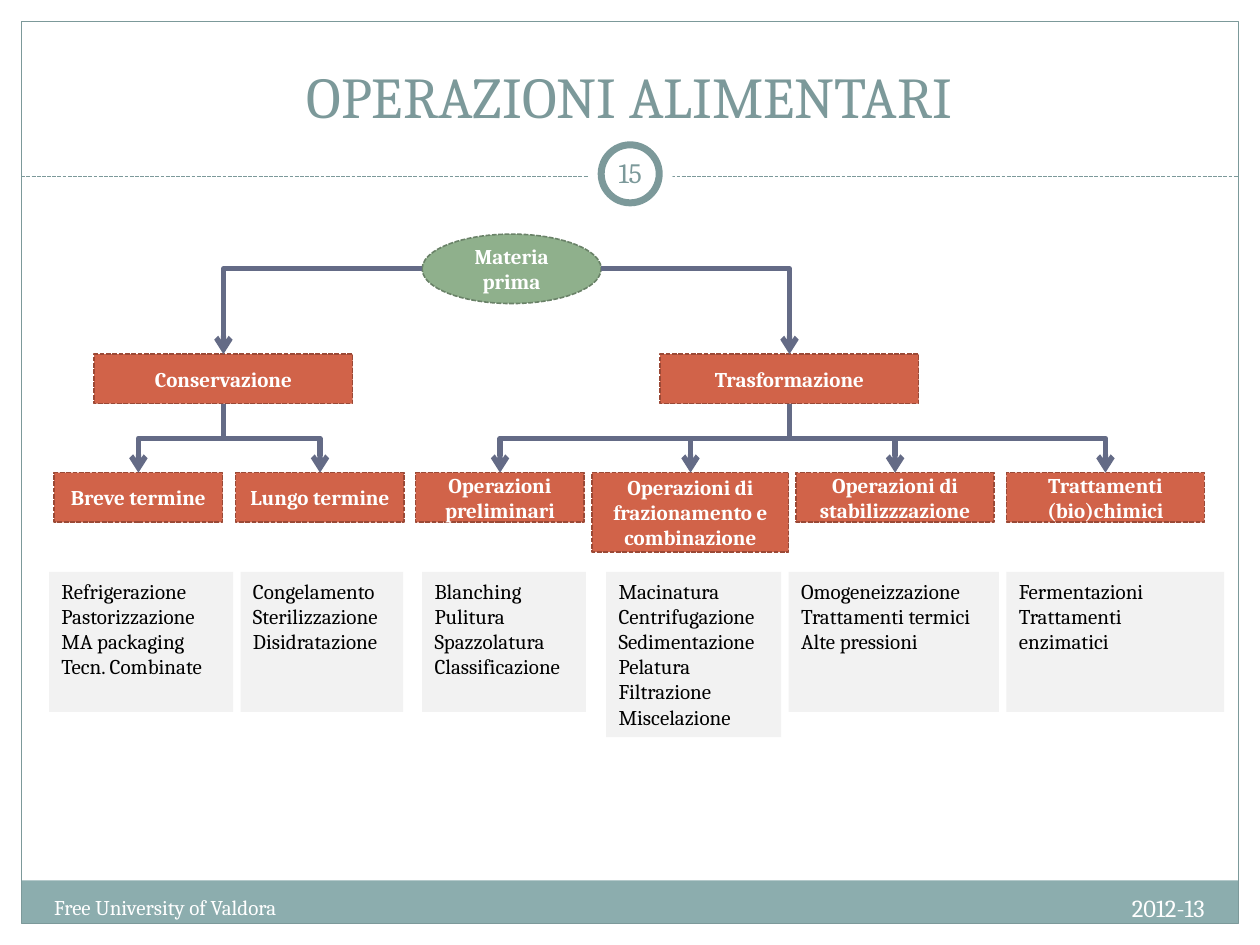
"""Builds a slide with a tree of food processing operations."""
from lxml import etree
from pptx import Presentation
from pptx import util as u
from pptx.dml import color
from pptx.enum import dml, shapes, text
from pptx.oxml import ns

FONT = "Cambria"
COLORS = {
    "white": "FFFFFF", "black": "000000", "teal": "7C999A", "band": "8CADAE",
    "green": "8FB08C", "green_edge": "6A8268", "red": "D16349",
    "red_edge": "9B4936", "arrow": "646B86", "panel": "F2F2F2",
}
SHAPE = shapes.MSO_SHAPE
ALIGN = text.PP_ALIGN
ANCHOR = text.MSO_ANCHOR
BRANCH_TOP, BRANCH_WIDTH, BOX_HEIGHT = 7.14, 5.21, 1
GROUP_TOP, LIST_TOP, LIST_HEIGHT = 9.53, 11.53, 2.82

BRANCHES = [
    ("Conservazione", 1.9, [
        ("Breve termine", 1.09, 3.4, BOX_HEIGHT),
        ("Lungo termine", 4.75, 3.4, BOX_HEIGHT),
    ]),
    ("Trasformazione", 13.31, [
        ("Operazioni preliminari", 8.38, 3.4, BOX_HEIGHT),
        ("Operazioni di frazionamento e combinazione", 11.94, 3.96, 1.6),
        ("Operazioni di stabilizzzazione", 16.05, 3.99, BOX_HEIGHT),
        ("Trattamenti (bio)chimici", 20.29, 3.99, BOX_HEIGHT),
    ]),
]
LISTS = [
    (0.99, 3.71, LIST_HEIGHT, ["Refrigerazione", "Pastorizzazione", "MA packaging", "Tecn. Combinate"]),
    (4.85, 3.28, LIST_HEIGHT, ["Congelamento", "Sterilizzazione", "Disidratazione"]),
    (8.51, 3.3, LIST_HEIGHT, ["Blanching", "Pulitura", "Spazzolatura", "Classificazione"]),
    (12.22, 3.53, 3.33, ["Macinatura", "Centrifugazione", "Sedimentazione",
                         "Pelatura", "Filtrazione", "Miscelazione"]),
    (15.9, 4.24, LIST_HEIGHT, ["Omogeneizzazione", "Trattamenti termici", "Alte pressioni"]),
    (20.29, 4.39, LIST_HEIGHT, ["Fermentazioni", "Trattamenti enzimatici"]),
]


def rgb(name):
    return color.RGBColor.from_string(COLORS[name])


def style_line(line, name, width, dashed=False):
    line.color.rgb = rgb(name)
    line.width = u.Pt(width)
    if dashed:
        line.dash_style = dml.MSO_LINE.SQUARE_DOT


def write(shape, lines, size, name, align=ALIGN.LEFT, anchor=ANCHOR.TOP, bold=False):
    frame = shape.text_frame
    frame.word_wrap = True
    frame.vertical_anchor = anchor
    for index, line in enumerate(lines):
        paragraph = frame.add_paragraph() if index else frame.paragraphs[0]
        paragraph.alignment = align
        run = paragraph.add_run()
        run.text = line
        run.font.name = FONT
        run.font.size = u.Pt(size)
        run.font.bold = bold
        run.font.color.rgb = rgb(name)


def add_shape(slide, kind, box, fill=None, edge=None, width=0.9, dashed=False):
    shape = slide.shapes.add_shape(kind, *map(u.Cm, box))
    shape.shadow.inherit = False
    if fill:
        shape.fill.solid()
        shape.fill.fore_color.rgb = rgb(fill)
    else:
        shape.fill.background()
    if edge:
        style_line(shape.line, edge, width, dashed)
    else:
        shape.line.fill.background()
    return shape


def add_label(slide, box, words, size, name, align, anchor=ANCHOR.TOP):
    shape = slide.shapes.add_textbox(*map(u.Cm, box))
    write(shape, [words], size, name, align, anchor)
    return shape


def add_node(slide, kind, box, words, fill, edge):
    shape = add_shape(slide, kind, box, fill, edge, dashed=True)
    write(shape, [words], 12, "white", ALIGN.CENTER, ANCHOR.MIDDLE, True)
    return shape


def add_line(slide, kind, start, end):
    connector = slide.shapes.add_connector(kind, *start, *end)
    etree.SubElement(connector._element.spPr, ns.qn("a:effectLst"))
    return connector


def add_arrow(slide, start, end):
    connector = add_line(slide, shapes.MSO_CONNECTOR.ELBOW, start, end)
    style_line(connector.line, "arrow", 3)
    etree.SubElement(connector.line._get_or_add_ln(), ns.qn("a:tailEnd"), type="arrow")
    return connector


def add_side_arrow(slide, start, end):
    connector = add_arrow(slide, start, end)
    connector._element.spPr.find(ns.qn("a:prstGeom")).set("prst", "bentConnector2")


def add_down_arrow(slide, start, end):
    (x1, y1), (x2, y2) = start, end
    drop, reach = y2 - y1, abs(x2 - x1)
    left = (x1 + x2 - drop) // 2
    top = (y1 + y2 - reach) // 2
    ends = [(left, top), (left + drop, top + reach)]
    if x2 > x1:
        ends = [(left + drop, top), (left, top + reach)]
    connector = add_arrow(slide, *ends)
    turn = 270 if x2 > x1 else 90
    connector._element.spPr.find(ns.qn("a:xfrm")).set("rot", str(turn * 60000))


def top_of(shape):
    return shape.left + shape.width // 2, shape.top


def bottom_of(shape):
    return shape.left + shape.width // 2, shape.top + shape.height


def add_frame(slide):
    add_shape(slide, SHAPE.RECTANGLE, (0.43, 17.75, 24.54, 0.86), "band")
    add_shape(slide, SHAPE.RECTANGLE, (0.43, 0.43, 24.54, 18.19), edge="teal", width=0.75)
    rule = add_line(slide, shapes.MSO_CONNECTOR.STRAIGHT,
                    (u.Cm(0.43), u.Cm(3.56)), (u.Cm(24.97), u.Cm(3.56)))
    style_line(rule.line, "teal", 0.75, True)
    add_shape(slide, SHAPE.OVAL, (11.86, 2.67, 1.7, 1.7), "white")
    add_shape(slide, SHAPE.OVAL, (12.12, 2.92, 1.17, 1.17), "white", "teal", 4)
    add_label(slide, (0.84, 0.64, 23.7, 2.11), "OPERAZIONI ALIMENTARI", 33, "teal",
              ALIGN.CENTER, ANCHOR.BOTTOM)
    add_label(slide, (0.84, 17.91, 9.96, 1.02), "Free University of Valdora", 12, "white", ALIGN.LEFT)
    number = add_label(slide, (12.07, 2.87, 1.27, 1.22), "15", 16, "teal", ALIGN.CENTER, ANCHOR.MIDDLE)
    number.text_frame.margin_left = number.text_frame.margin_right = u.Cm(0.13)
    add_label(slide, (16.08, 17.88, 8.46, 1.02), "2012-13", 14, "white", ALIGN.RIGHT)


def add_tree(slide):
    root = add_node(slide, SHAPE.OVAL, (8.51, 4.72, 3.61, 1.4), "Materia prima", "green", "green_edge")
    middle = root.top + root.height // 2
    sides = [root.left, root.left + root.width]
    for side, (title, left, groups) in zip(sides, BRANCHES):
        branch = add_node(slide, SHAPE.RECTANGLE, (left, BRANCH_TOP, BRANCH_WIDTH, BOX_HEIGHT),
                          title, "red", "red_edge")
        add_side_arrow(slide, (side, middle), top_of(branch))
        for words, group_left, width, height in groups:
            group = add_node(slide, SHAPE.RECTANGLE, (group_left, GROUP_TOP, width, height),
                             words, "red", "red_edge")
            add_down_arrow(slide, bottom_of(branch), top_of(group))


def add_lists(slide):
    for left, width, height, lines in LISTS:
        panel = add_shape(slide, SHAPE.RECTANGLE, (left, LIST_TOP, width, height), "panel")
        write(panel, lines, 12, "black")


def main():
    presentation = Presentation()
    presentation.slide_width = u.Cm(25.4)
    presentation.slide_height = u.Cm(19.05)
    slide = presentation.slides.add_slide(presentation.slide_layouts[6])
    add_frame(slide)
    add_tree(slide)
    add_lists(slide)
    presentation.save("out.pptx")


main()
